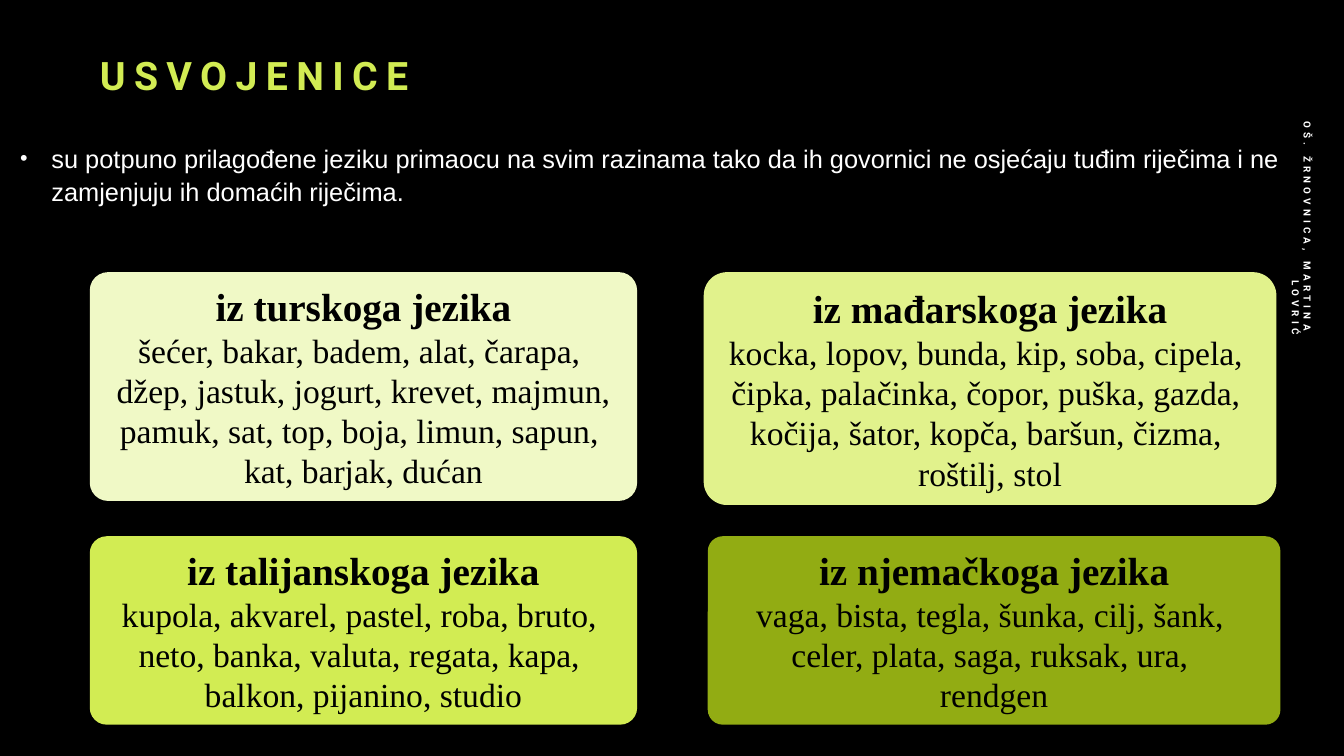
from dataclasses import dataclass

from lxml import etree
from pptx import Presentation
from pptx.dml.color import RGBColor
from pptx.enum.shapes import MSO_SHAPE
from pptx.enum.text import MSO_ANCHOR, MSO_AUTO_SIZE, PP_ALIGN
from pptx.oxml.ns import qn
from pptx.util import Inches, Pt

ROUND = MSO_SHAPE.ROUNDED_RECTANGLE
TOP, MID, LOW = MSO_ANCHOR.TOP, MSO_ANCHOR.MIDDLE, MSO_ANCHOR.BOTTOM
LEFT, MIDST, RIGHT = PP_ALIGN.LEFT, PP_ALIGN.CENTER, PP_ALIGN.RIGHT
FIXED, GROW = MSO_AUTO_SIZE.NONE, MSO_AUTO_SIZE.SHAPE_TO_FIT_TEXT
WIDE, HIGH = Inches(13.33), Inches(7.5)


@dataclass(frozen=True)
class Theme:
    back: str = "000000"
    ink: str = "000000"
    lime: str = "D2EC53"
    white: str = "FFFFFF"
    pale: str = "F0F9C6"
    soft: str = "E1F28C"
    olive: str = "92AC13"
    head: str = "Roboto"
    body: str = "Arial"
    card: str = "Times New Roman"
    big: float = 28
    mid: float = 24
    text: float = 18.1
    tiny: float = 7


LOOK = Theme()

# Boxes are left, top, width, height in percent of the slide
TITLE = (6.68, 1.2, 75.77, 12.53)
INTRO = (-3, 15.33, 102.48, 17.6)
SIDE = (85.9, 23.47, 21.91, 5.33)

# Cards: box, corner share, fill, heading, lines
CARDS = [
    ((6.68, 36, 40.73, 30.27), 0.08, LOOK.pale, "iz turskoga jezika",
     ["šećer, bakar, badem, alat, čarapa, ",
      "džep, jastuk, jogurt, krevet, majmun, pamuk, sat, top, boja, limun, sapun, ",
      "kat, barjak, dućan"]),
    ((52.36, 36, 42.61, 30.8), 0.1, LOOK.soft, "iz mađarskoga jezika",
     ["kocka, lopov, bunda, kip, soba, cipela, ",
      "čipka, palačinka, čopor, puška, gazda, ",
      "kočija, šator, kopča, baršun, čizma, ",
      "roštilj, stol"]),
    ((6.68, 70.93, 40.73, 24.93), 0.09, LOOK.lime, "iz talijanskoga jezika",
     ["kupola, akvarel, pastel, roba, bruto, ",
      "neto, banka, valuta, regata, kapa, ",
      "balkon, pijanino, studio"]),
    ((52.66, 70.93, 42.61, 24.93), 0.08, LOOK.olive, "iz njemačkoga jezika",
     ["vaga, bista, tegla, šunka, cilj, šank, ",
      "celer, plata, saga, ruksak, ura, ",
      "rendgen"]),
]


def span(box):
    """Turn percent shares into slide lengths."""
    return [int(part * side / 100)
            for part, side in zip(box, (WIDE, HIGH, WIDE, HIGH))]


def put(item, values):
    for name, value in values.items():
        setattr(item, name, value)


def place(shape, box):
    put(shape, dict(zip(("left", "top", "width", "height"), span(box))))


def write(para, text, face, size, color, bold=False, track=0, **form):
    run = para.add_run()
    run.text = text
    put(run.font, {"name": face, "size": Pt(size), "bold": bold})
    run.font.color.rgb = RGBColor.from_string(color)
    if track:
        run.font._element.set("spc", str(track * 100))
    put(para, form)


def bullet(para, mark, share, left, hang):
    props = para._p.get_or_add_pPr()
    props.set("marL", str(Inches(left)))
    props.set("indent", str(-Inches(hang)))
    etree.SubElement(props, qn("a:buSzPct")).set("val", str(share * 1000))
    etree.SubElement(props, qn("a:buChar")).set("char", mark)


# Title
def title(shape, box):
    place(shape, box)
    frame = shape.text_frame
    put(frame, {"vertical_anchor": LOW, "auto_size": FIXED, "word_wrap": True})
    write(frame.paragraphs[0], "USVOJENICE", LOOK.head, LOOK.big, LOOK.lime,
          True, 6, alignment=LEFT, line_spacing=1.2)


# Definition with its bullet
def intro(shape, box):
    place(shape, box)
    frame = shape.text_frame
    put(frame, {"vertical_anchor": TOP, "auto_size": FIXED,
                "word_wrap": True, "margin_top": Inches(0.24)})
    para = frame.paragraphs[0]
    write(para, "su potpuno prilagođene jeziku primaocu na svim razinama tako da "
          "ih govornici ne osjećaju tuđim riječima i ne zamjenjuju ih domaćih "
          "riječima.", LOOK.body, LOOK.text, LOOK.white,
          level=1, alignment=LEFT, line_spacing=1.1, space_before=Pt(0))
    bullet(para, "•", 85, 0.81, 0.31)


# Card with the loanwords of one language
def card(slide, box, curve, fill, name, lines):
    shape = slide.shapes.add_shape(ROUND, *span(box))
    shape.adjustments[0] = curve
    shape.shadow.inherit = False
    shape.fill.solid()
    shape.fill.fore_color.rgb = RGBColor.from_string(fill)
    shape.line.fill.background()
    frame = shape.text_frame
    put(frame, {"vertical_anchor": MID, "auto_size": GROW, "word_wrap": True})
    write(frame.paragraphs[0], name, LOOK.card, LOOK.big, LOOK.ink, True,
          alignment=MIDST)
    for line in lines:
        write(frame.add_paragraph(), line, LOOK.card, LOOK.mid, LOOK.ink,
              alignment=MIDST)


# Turned author line on the right edge
def side(slide, box):
    shape = slide.shapes.add_textbox(*span(box))
    shape.rotation = 90
    frame = shape.text_frame
    put(frame, {"vertical_anchor": MID, "auto_size": FIXED, "word_wrap": True})
    write(frame.paragraphs[0], "OŠ. ŽRNOVNICA, MARTINA LOVRIĆ", LOOK.head,
          LOOK.tiny, LOOK.white, True, 3, alignment=RIGHT)


def main():
    deck = Presentation()
    put(deck, {"slide_width": WIDE, "slide_height": HIGH})
    slide = deck.slides.add_slide(deck.slide_layouts[1])
    slide.background.fill.solid()
    slide.background.fill.fore_color.rgb = RGBColor.from_string(LOOK.back)
    title(slide.shapes.title, TITLE)
    intro(slide.placeholders[1], INTRO)
    for data in CARDS:
        card(slide, *data)
    side(slide, SIDE)
    deck.save("out.pptx")


if __name__ == "__main__":
    main()
